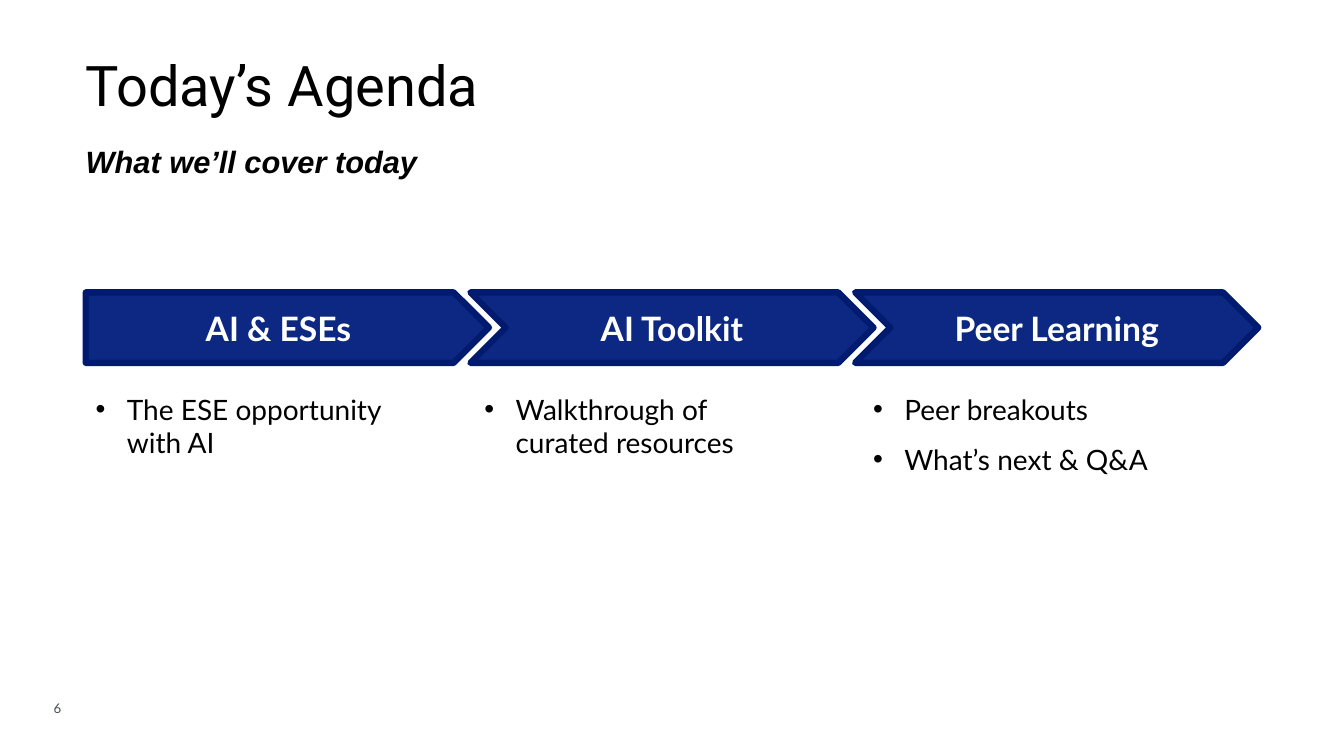
from dataclasses import dataclass

from lxml.etree import SubElement
from pptx import Presentation
from pptx.dml.color import RGBColor
from pptx.enum.shapes import MSO_SHAPE
from pptx.enum.text import MSO_ANCHOR, PP_ALIGN
from pptx.oxml.ns import qn
from pptx.util import Inches, Pt

BLACK, WHITE, GREY = "000000", "FFFFFF", "474C55"
NAVY, EDGE = "0C2882", "001A70"


@dataclass
class Box:
    """Place and size in percent of the slide's width and height."""
    x: float
    y: float
    w: float
    h: float


@dataclass
class Label:
    text: str
    box: Box
    color: str
    font: dict
    para: dict
    anchor: MSO_ANCHOR = MSO_ANCHOR.TOP


@dataclass
class Step:
    name: str
    form: MSO_SHAPE
    points: list[str]


LEFT = 6.38
ARROW, ARROW_GAP = Box(LEFT, 38.67, 30, 9.33), 28.62
PANEL, PANEL_GAP = Box(LEFT, 51.2, 25.36, 39.33), 28.92
HEAD = {"name": "Lato", "size": Pt(24), "bold": True}
BODY = {"name": "Lato", "size": Pt(20), "bold": False}

LABELS = [
    Label("6", Box(3.98, 92.67, 8.55, 2.13), GREY,
          {"name": "Lato", "size": Pt(9.5)}, {}, MSO_ANCHOR.MIDDLE),
    Label("Today’s Agenda", Box(LEFT, 7.73, 87.25, 8.13), BLACK,
          {"name": "Roboto", "size": Pt(40)}, {"line_spacing": 0.9}),
    Label("What we’ll cover today", Box(LEFT, 18.93, 86.65, 4.93), BLACK,
          {"name": "Arial", "size": Pt(22), "bold": True, "italic": True},
          {"space_after": Pt(6)}),
]
STEPS = [
    Step("AI & ESEs", MSO_SHAPE.PENTAGON, ["The ESE opportunity with AI"]),
    Step("AI Toolkit", MSO_SHAPE.CHEVRON, ["Walkthrough of curated resources"]),
    Step("Peer Learning", MSO_SHAPE.CHEVRON,
         ["Peer breakouts", "What’s next & Q&A"]),
]

deck = Presentation()
deck.slide_width, deck.slide_height = Inches(13.33), Inches(7.5)
slide = deck.slides.add_slide(deck.slide_layouts[6])


def paint(target, color: str) -> None:
    target.rgb = RGBColor.from_string(color)


def apply(target, values: dict) -> None:
    for key, value in values.items():
        setattr(target, key, value)


def place(box: Box, shift: float = 0) -> list[int]:
    """Turn shares into lengths, moved right by shift percent."""
    wide, high = deck.slide_width / 100, deck.slide_height / 100
    return [round(n) for n in ((box.x + shift) * wide, box.y * high,
                               box.w * wide, box.h * high)]


def write(para, text: str, color: str, font: dict, form: dict) -> None:
    para.text = text
    apply(para, form)
    for run in para.runs:
        apply(run.font, font)
        paint(run.font.color, color)


def add_label(label: Label) -> None:
    frame = slide.shapes.add_textbox(*place(label.box)).text_frame
    sides = ("left", "right", "top", "bottom")
    apply(frame, {f"margin_{side}": 0 for side in sides})
    apply(frame, {"word_wrap": True, "vertical_anchor": label.anchor})
    write(frame.paragraphs[0], label.text, label.color, label.font, label.para)


def add_form(form: MSO_SHAPE, spot: list[int], fill: str):
    shape = slide.shapes.add_shape(form, *spot)
    shape.shadow.inherit = False
    shape.fill.solid()
    paint(shape.fill.fore_color, fill)
    shape.text_frame.word_wrap = True
    return shape


def add_arrow(step: Step, col: int) -> None:
    arrow = add_form(step.form, place(ARROW, col * ARROW_GAP), NAVY)
    paint(arrow.line.color, EDGE)
    arrow.line.width = Pt(4.5)
    SubElement(arrow.line._get_or_add_ln(), qn("a:round"))
    arrow.text_frame.vertical_anchor = MSO_ANCHOR.MIDDLE
    write(arrow.text_frame.paragraphs[0], step.name, WHITE, HEAD,
          {"alignment": PP_ALIGN.CENTER})


def add_bullet(para) -> None:
    props = para._p.get_or_add_pPr()
    props.set("marL", str(Inches(0.31)))
    props.set("indent", str(-Inches(0.31)))
    tint = SubElement(props, qn("a:buClr"))
    SubElement(tint, qn("a:srgbClr"), val=BLACK)
    SubElement(props, qn("a:buFont"), typeface="Arial")
    SubElement(props, qn("a:buChar"), char="•")


def add_panel(step: Step, col: int) -> None:
    panel = add_form(MSO_SHAPE.RECTANGLE, place(PANEL, col * PANEL_GAP), WHITE)
    panel.line.fill.background()
    frame = panel.text_frame
    frame.vertical_anchor = MSO_ANCHOR.TOP
    for row, point in enumerate(step.points):
        para = frame.add_paragraph() if row else frame.paragraphs[0]
        add_bullet(para)
        form = {"alignment": PP_ALIGN.LEFT}
        if row:
            form["space_before"] = Pt(12)
        write(para, point, BLACK, BODY, form)


def main() -> None:
    for label in LABELS:
        add_label(label)
    for draw in (add_arrow, add_panel):
        for col, step in enumerate(STEPS):
            draw(step, col)
    deck.save("out.pptx")


if __name__ == "__main__":
    main()
